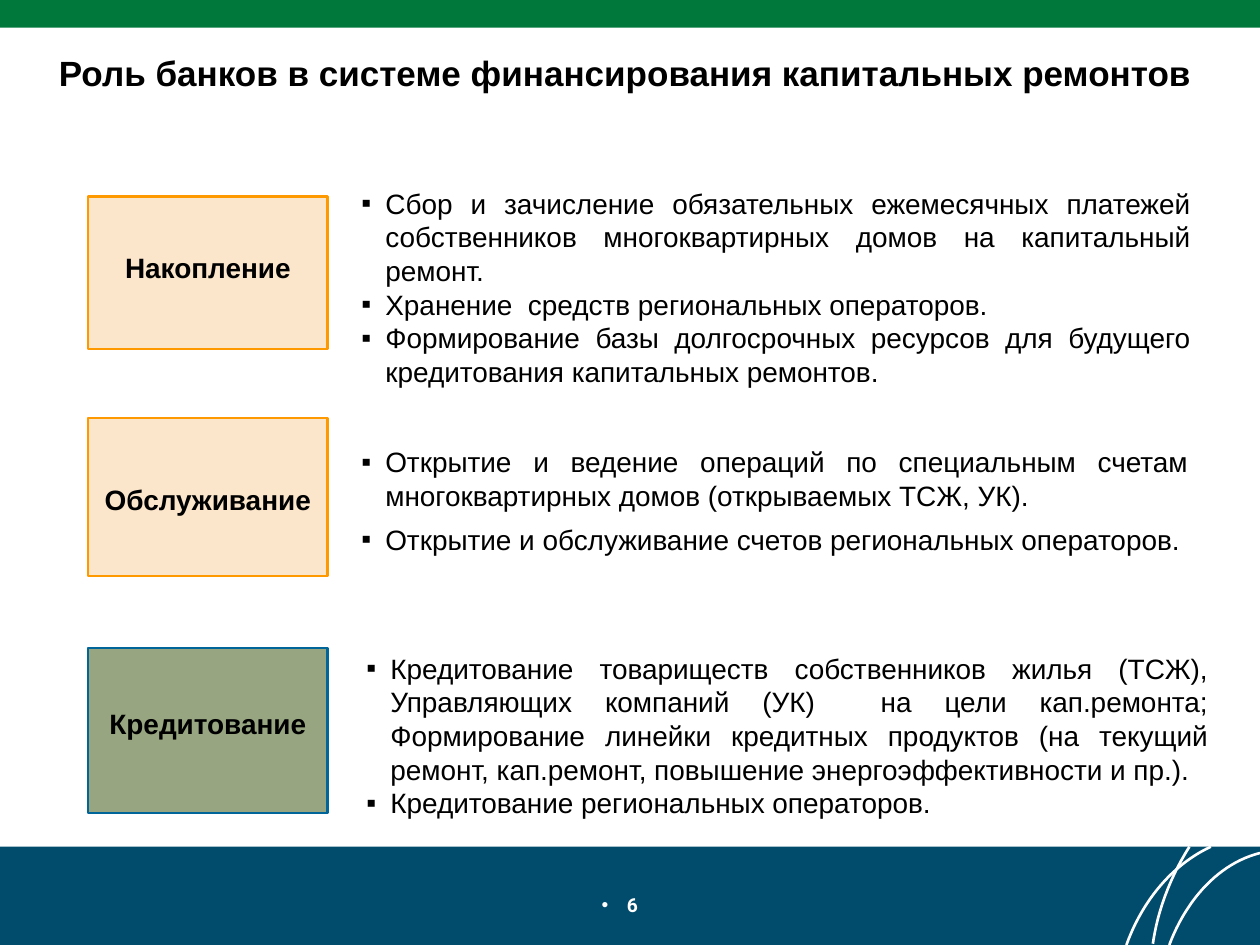
"""Build a slide on the role of banks in financing capital repairs."""
from dataclasses import dataclass

from lxml import etree
from pptx import Presentation
from pptx.dml.color import RGBColor
from pptx.enum import shapes, text
from pptx.oxml import ns
from pptx.util import Inches, Pt


@dataclass(frozen=True)
class Theme:
    """Colours, fonts and sizes of the slide."""
    green: str = "00783C"
    navy: str = "014C6D"
    white: str = "FFFFFF"
    black: str = "000000"
    peach: str = "FBE6CB"
    orange: str = "FF9900"
    olive: str = "97A680"
    blue: str = "006699"
    body_font: str = "Arial"
    number_font: str = "Roboto"
    title_size: float = 20
    body_size: float = 16
    number_size: float = 11
    border: float = 1.25
    arc_line: float = 1.5


THEME = Theme()
CENTER, JUSTIFY = text.PP_ALIGN.CENTER, text.PP_ALIGN.JUSTIFY
INDENT = 0.19

STAGES = [
    {"label": "Накопление", "label_top": 1.94, "card": (1.56, 1.21),
     "fill": THEME.peach, "line": THEME.orange,
     "list": (2.77, 1.43, 6.78, 1.72), "after": 0,
     "items": ["Сбор и зачисление обязательных ежемесячных платежей собственников "
               "многоквартирных домов на капитальный ремонт.",
               "Хранение  средств региональных операторов.",
               "Формирование базы долгосрочных ресурсов для будущего "
               "кредитования капитальных ремонтов."]},
    {"label": "Обслуживание", "label_top": 3.78, "card": (3.32, 1.25),
     "fill": THEME.peach, "line": THEME.orange,
     "list": (2.77, 3.48, 6.76, 0.99), "after": 6,
     "items": ["Открытие и ведение операций по специальным счетам "
               "многоквартирных домов (открываемых ТСЖ, УК).",
               "Открытие и обслуживание счетов региональных операторов."]},
    {"label": "Кредитование", "label_top": 5.56, "card": (5.14, 1.31),
     "fill": THEME.olive, "line": THEME.blue,
     "list": (2.81, 5.12, 6.88, 1.72), "after": 0,
     "items": ["Кредитование товариществ собственников жилья (ТСЖ), Управляющих "
               "компаний (УК)  на цели кап.ремонта; Формирование линейки кредитных "
               "продуктов (на текущий ремонт, кап.ремонт, повышение "
               "энергоэффективности и пр.).",
               "Кредитование региональных операторов."]},
]

ARCS = [
    [((9.61, 6.72), (9.31, 6.86), (9.07, 7.14), (8.94, 7.5))],
    [((10, 6.77), (9.68, 6.85), (9.42, 7.13), (9.28, 7.5)),
     ((9.44, 6.72), (9.3, 6.94), (9.19, 7.21), (9.15, 7.49))],
]


def color(value):
    """Turn a hex string into a colour."""
    return RGBColor.from_string(value)


def add_rectangle(page, left, top, width, height, fill, line=None):
    """Add a flat rectangle with an optional border."""
    box = page.shapes.add_shape(
        shapes.MSO_SHAPE.RECTANGLE, *map(Inches, (left, top, width, height)))
    box.shadow.inherit = False
    box.fill.solid()
    box.fill.fore_color.rgb = color(fill)
    if line:
        box.line.color.rgb = color(line)
        box.line.width = Pt(THEME.border)
    else:
        box.line.fill.background()


def curve_points(curve, steps=24):
    """Sample a cubic Bezier curve at equal steps, in slide units."""
    points = []
    for step in range(steps + 1):
        t = step / steps
        weights = ((1 - t) ** 3, 3 * t * (1 - t) ** 2, 3 * t * t * (1 - t), t ** 3)
        points.append(tuple(
            Inches(sum(w * p[axis] for w, p in zip(weights, curve)))
            for axis in (0, 1)))
    return points


def add_arcs(page, curves):
    """Add one open outline made of several curves."""
    first, *others = map(curve_points, curves)
    builder = page.shapes.build_freeform(*first[0], scale=1.0)
    builder.add_line_segments(first[1:], close=False)
    for points in others:
        builder.move_to(*points[0])
        builder.add_line_segments(points[1:], close=False)
    arc = builder.convert_to_shape()
    arc.shadow.inherit = False
    arc.fill.background()
    arc.line.color.rgb = color(THEME.white)
    arc.line.width = Pt(THEME.arc_line)


def add_bullet(para, char, indent):
    """Give a paragraph a hanging bullet."""
    props = para._p.get_or_add_pPr()
    props.set("marL", str(Inches(indent)))
    props.set("indent", str(-Inches(indent)))
    etree.SubElement(props, ns.qn("a:buFont")).set("typeface", THEME.body_font)
    etree.SubElement(props, ns.qn("a:buChar")).set("char", char)


def add_text(page, place, lines, size=THEME.body_size, align=JUSTIFY, bold=False,
             ink=THEME.black, font=THEME.body_font, bullet=None, indent=INDENT, after=0):
    """Add a wrapped text box with one paragraph per line."""
    box = page.shapes.add_textbox(*map(Inches, place))
    frame = box.text_frame
    frame.word_wrap = True
    frame.text = "\n".join(lines)
    for para in frame.paragraphs:
        para.alignment = align
        para.space_after = Pt(after)
        if bullet:
            add_bullet(para, bullet, indent)
        for span in para.runs:
            span.font.name = font
            span.font.size = Pt(size)
            span.font.bold = bold
            span.font.color.rgb = color(ink)
    return frame


def add_stage(page, stage):
    """Add a labelled card with its bulleted list."""
    top, height = stage["card"]
    add_rectangle(page, 0.7, top, 1.9, height, stage["fill"], stage["line"])
    add_text(page, (0.7, stage["label_top"], 1.9, 0.37), [stage["label"]],
             align=CENTER, bold=True)
    add_text(page, stage["list"], stage["items"], bullet="▪", after=stage["after"])


def main():
    """Build and save the slide."""
    deck = Presentation()
    deck.slide_width, deck.slide_height = Inches(10), Inches(7.5)
    page = deck.slides.add_slide(deck.slide_layouts[6])
    add_rectangle(page, 0, 6.72, 10, 0.78, THEME.navy)
    for curves in ARCS:
        add_arcs(page, curves)
    add_rectangle(page, 0, 0, 10, 0.22, THEME.green)
    number = add_text(page, (3.97, 7.04, 2.06, 0.31), ["6"], size=THEME.number_size,
                      align=CENTER, bold=True, ink=THEME.white,
                      font=THEME.number_font, bullet="•", indent=0.2)
    number.margin_right = Inches(0.26)
    add_text(page, (0.37, 0.36, 9.24, 0.44),
             ["Роль банков в системе финансирования капитальных ремонтов"],
             size=THEME.title_size, bold=True)
    for stage in STAGES:
        add_stage(page, stage)
    deck.save("out.pptx")


if __name__ == "__main__":
    main()
